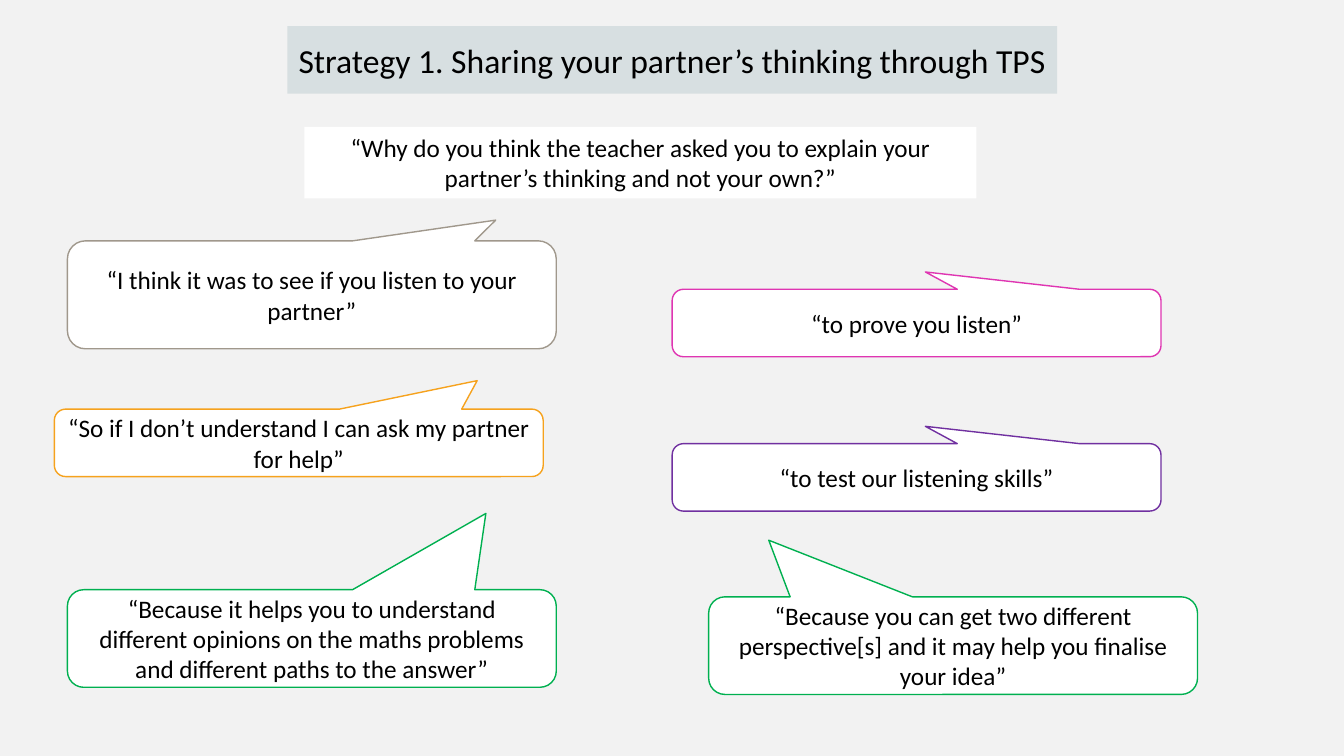
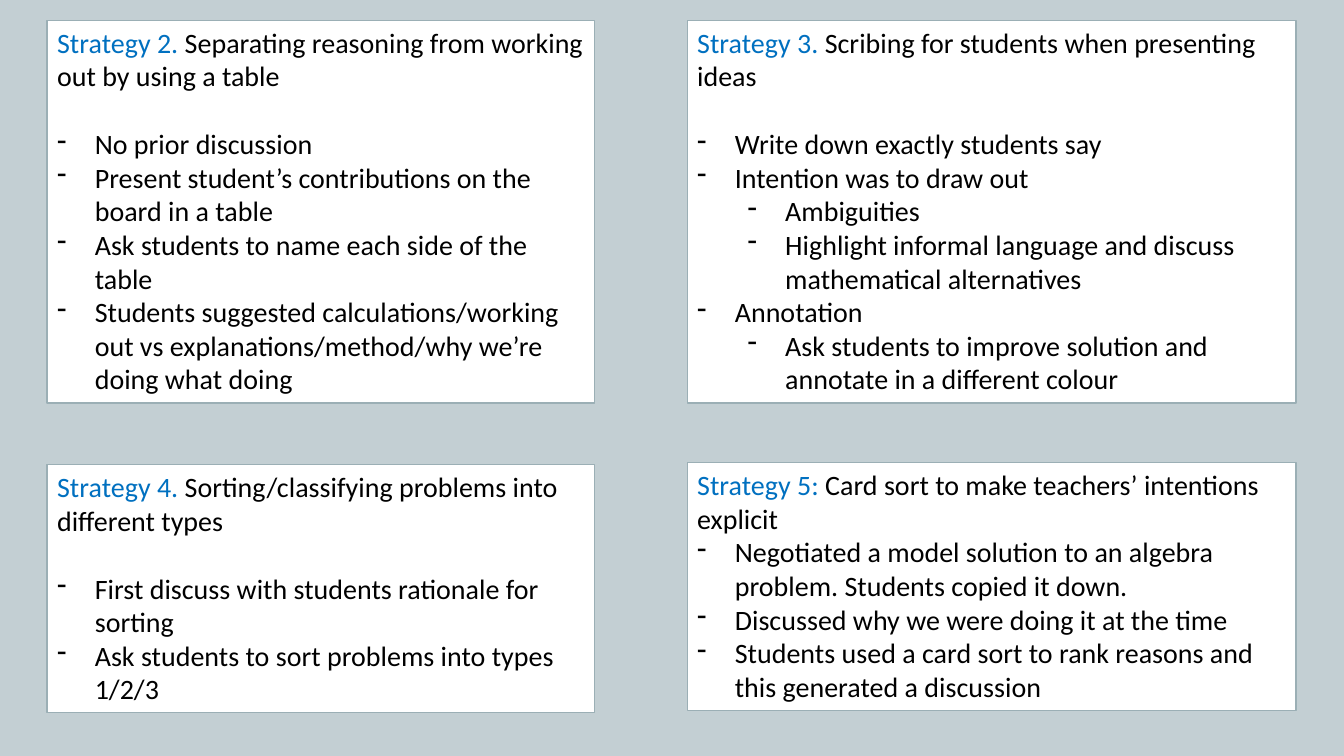
from dataclasses import dataclass

from lxml import etree
from pptx import Presentation
from pptx.dml.color import RGBColor
from pptx.enum import shapes, text
from pptx.oxml import ns
from pptx.util import Cm, Pt

FONT = "Calibri"
COLOURS = {
    "pale": "F2F2F2", "mist": "C3CFD3", "band": "D7DFE1", "white": "FFFFFF",
    "black": "000000", "blue": "0070C0", "edge": "9BAFB5", "taupe": "A0988C",
    "pink": "DF35B2", "orange": "F6A21D", "purple": "7030A0", "green": "00B050",
}
CALLOUT_WIDTH = 12.32
BULLET_INDENT = 0.95
LEVEL_STEP = 1.27


@dataclass
class Box:
    """Position and size in centimetres."""
    left: float
    top: float
    width: float
    height: float

    def lengths(self):
        return Cm(self.left), Cm(self.top), Cm(self.width), Cm(self.height)


@dataclass
class Callout:
    left: float
    top: float
    height: float
    tip: tuple[float, float]
    line: str
    quote: str


@dataclass
class Card:
    box: Box
    label: str
    heading: str
    bullets: list[tuple[int, str]]
    heading_gap: float = 24.4


# Slide 1: student answers
CALLOUTS = [
    Callout(1.7, 6.07, 2.72, (0.376, -0.692), "taupe",
            "“I think it was to see if you listen to your partner”"),
    Callout(16.94, 7.29, 1.7, (0.018, -0.757), "pink", "“to prove you listen”"),
    Callout(1.37, 10.31, 1.7, (0.365, -0.922), "orange",
            "“So if I don’t understand I can ask my partner for help”"),
    Callout(16.94, 11.18, 1.7, (0.018, -0.757), "purple",
            "“to test our listening skills”"),
    Callout(1.7, 14.86, 2.46, (0.356, -1.281), "green",
            "“Because it helps you to understand different opinions on the maths "
            "problems and different paths to the answer”"),
    Callout(17.86, 15.04, 2.46, (-0.377, -1.08), "green",
            "“Because you can get two different perspective[s] and it may help you "
            "finalise your idea”"),
]

# Slide 2: strategies, each bullet with its level
CARDS = [
    Card(Box(1.19, 0.51, 13.79, 9.65), "Strategy 2. ",
         "Separating reasoning from working out by using a table",
         [(0, "No prior discussion"),
          (0, "Present student’s contributions on the board in a table"),
          (0, "Ask students to name each side of the table"),
          (0, "Students suggested calculations/working out vs "
              "explanations/method/why we’re doing what doing")]),
    Card(Box(17.32, 0.51, 15.34, 9.65), "Strategy 3. ",
         "Scribing for students when presenting ideas",
         [(0, "Write down exactly students say"),
          (0, "Intention was to draw out"),
          (1, "Ambiguities"),
          (1, "Highlight informal language and discuss mathematical alternatives"),
          (0, "Annotation"),
          (1, "Ask students to improve solution and annotate in a different colour")]),
    Card(Box(1.19, 11.71, 13.79, 6.25), "Strategy 4. ",
         "Sorting/classifying problems into different types",
         [(0, "First discuss with students rationale for sorting"),
          (0, "Ask students to sort problems into types 1/2/3")]),
    Card(Box(17.32, 11.66, 15.34, 6.25), "Strategy 5: ",
         "Card sort to make teachers’ intentions explicit",
         [(0, "Negotiated a model solution to an algebra problem. "
              "Students copied it down."),
          (0, "Discussed why we were doing it at the time"),
          (0, "Students used a card sort to rank reasons and this generated "
              "a discussion")],
         heading_gap=0),
]


def colour(name: str) -> RGBColor:
    return RGBColor.from_string(COLOURS[name])


def fill_solid(target, name: str) -> None:
    target.fill.solid()
    target.fill.fore_color.rgb = colour(name)


def format_run(run, size: float, name: str = "black") -> None:
    run.font.name = FONT
    run.font.size = Pt(size)
    run.font.color.rgb = colour(name)


def set_centred_text(shape, words: str, size: float) -> None:
    frame = shape.text_frame
    frame.text = words
    frame.word_wrap = True
    frame.auto_size = text.MSO_AUTO_SIZE.NONE
    frame.vertical_anchor = text.MSO_ANCHOR.MIDDLE
    paragraph = frame.paragraphs[0]
    paragraph.alignment = text.PP_ALIGN.CENTER
    format_run(paragraph.runs[0], size)


def add_panel(slide, kind, box: Box, line: str | None = None):
    """Add a white shape, outlined when a line colour is given."""
    shape = slide.shapes.add_shape(kind, *box.lengths())
    shape.shadow.inherit = False
    fill_solid(shape, "white")
    if line:
        shape.line.color.rgb = colour(line)
        shape.line.width = Pt(1)
    else:
        shape.line.fill.background()
    return shape


def add_slide(presentation, layout_index: int, background: str):
    slide = presentation.slides.add_slide(presentation.slide_layouts[layout_index])
    fill_solid(slide.background, background)
    return slide


def add_title(slide, box: Box, words: str) -> None:
    title = slide.shapes.title
    title.left, title.top, title.width, title.height = box.lengths()
    fill_solid(title, "band")
    set_centred_text(title, words, 24)
    title.text_frame.margin_left = title.text_frame.margin_right = Cm(0.1)


def add_callout(slide, callout: Callout) -> None:
    box = Box(callout.left, callout.top, CALLOUT_WIDTH, callout.height)
    shape = add_panel(slide, shapes.MSO_SHAPE.ROUNDED_RECTANGULAR_CALLOUT,
                      box, callout.line)
    shape.adjustments[0], shape.adjustments[1] = callout.tip
    set_centred_text(shape, callout.quote, 18)


def set_bullet(paragraph, level: int) -> None:
    paragraph.level = level
    properties = paragraph._p.get_or_add_pPr()
    properties.set("marL", str(Cm(BULLET_INDENT + level * LEVEL_STEP)))
    properties.set("indent", str(-Cm(BULLET_INDENT)))
    etree.SubElement(properties, ns.qn("a:buFontTx"))
    etree.SubElement(properties, ns.qn("a:buChar")).set("char", "-")


def add_card(slide, card: Card) -> None:
    shape = add_panel(slide, shapes.MSO_SHAPE.RECTANGLE, card.box, "edge")
    frame = shape.text_frame
    frame.word_wrap = True
    frame.vertical_anchor = text.MSO_ANCHOR.TOP

    heading = frame.paragraphs[0]
    heading.alignment = text.PP_ALIGN.LEFT
    heading.space_after = Pt(card.heading_gap)
    for words, name in ((card.label, "blue"), (card.heading, "black")):
        run = heading.add_run()
        run.text = words
        format_run(run, 20, name)

    for level, words in card.bullets:
        paragraph = frame.add_paragraph()
        paragraph.text = words
        paragraph.alignment = text.PP_ALIGN.LEFT
        set_bullet(paragraph, level)
        format_run(paragraph.runs[0], 20)


def build_answers_slide(presentation) -> None:
    slide = add_slide(presentation, 5, "pale")
    add_title(slide, Box(7.24, 0.66, 19.4, 1.7),
              "Strategy 1. Sharing your partner’s thinking through TPS")
    for callout in CALLOUTS:
        add_callout(slide, callout)
    question = add_panel(slide, shapes.MSO_SHAPE.RECTANGLE,
                         Box(7.67, 3.2, 16.94, 1.8))
    set_centred_text(question, "“Why do you think the teacher asked you to explain "
                     "your partner’s thinking and not your own?”", 18)


def build_strategies_slide(presentation) -> None:
    slide = add_slide(presentation, 6, "mist")
    for card in CARDS:
        add_card(slide, card)


def main() -> None:
    presentation = Presentation()
    presentation.slide_width = Cm(33.87)
    presentation.slide_height = Cm(19.05)
    build_answers_slide(presentation)
    build_strategies_slide(presentation)
    presentation.save("out.pptx")


if __name__ == "__main__":
    main()
